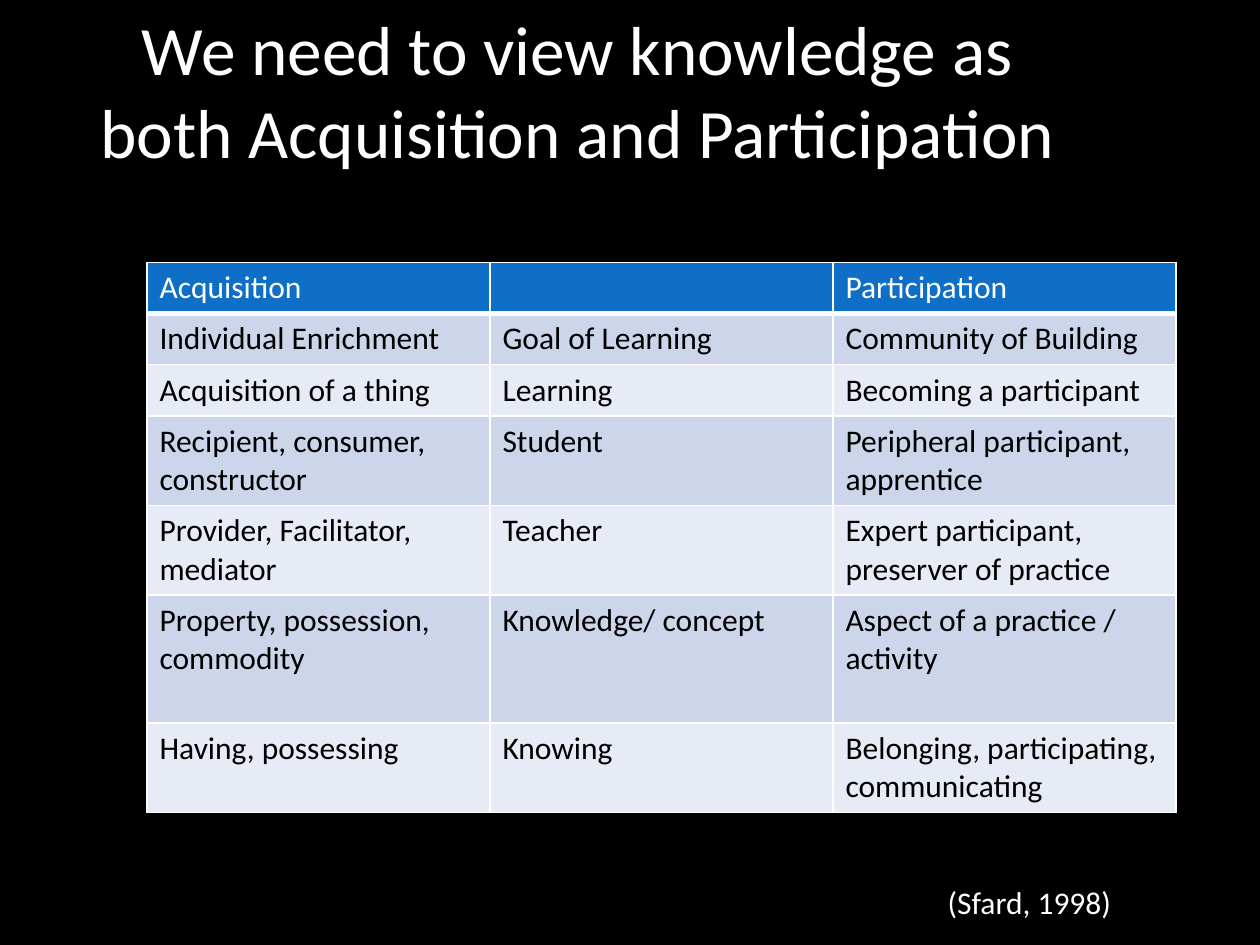
from lxml import etree
from pptx import Presentation
from pptx.dml.color import RGBColor
from pptx.enum.text import MSO_ANCHOR, MSO_AUTO_SIZE, PP_ALIGN
from pptx.oxml.ns import qn
from pptx.util import Inches, Pt

LEFT, MID, RIGHT = PP_ALIGN.LEFT, PP_ALIGN.CENTER, PP_ALIGN.RIGHT
TOP, CENTER = MSO_ANCHOR.TOP, MSO_ANCHOR.MIDDLE
FIXED = MSO_AUTO_SIZE.NONE
TITLE_ONLY = 5
COLS, ROWS = 120, 90

BLACK, WHITE, BLUE = "000000", "FFFFFF", "0F6FC6"
BANDS = ["CCD5EA", "E7EBF5"]
CELLS = [
    ["Acquisition", "", "Participation"],
    ["Individual Enrichment", "Goal of Learning", "Community of Building"],
    ["Acquisition of a thing", "Learning", "Becoming a participant"],
    ["Recipient, consumer, constructor", "Student",
     "Peripheral participant, apprentice"],
    ["Provider, Facilitator, mediator", "Teacher",
     "Expert participant, preserver of practice"],
    ["Property, possession, commodity", "Knowledge/ concept",
     "Aspect of a practice / activity"],
    ["Having, possessing", "Knowing",
     "Belonging, participating, communicating"],
]
LINES = [1, 1, 1, 2, 2, 3, 2]


def color(code):
    return RGBColor.from_string(code)


def write(frame, text, size=18, fill=WHITE, align=LEFT, font="Calibri"):
    frame.word_wrap = True
    para = frame.paragraphs[0]
    para.alignment = align
    para.font.size = Pt(size)
    if text:
        run = para.add_run()
        run.text = text
        run.font.size = Pt(size)
        run.font.name = font
        run.font.color.rgb = color(fill)


def edge(cell, side, width):
    line = etree.SubElement(cell._tc.get_or_add_tcPr(), qn(f"a:ln{side}"),
                            w=str(Pt(width)))
    solid = etree.SubElement(line, qn("a:solidFill"))
    etree.SubElement(solid, qn("a:srgbClr"), val=WHITE)


class Deck:
    def __init__(self, width, height):
        self.show = Presentation()
        self.show.slide_width = Inches(width)
        self.show.slide_height = Inches(height)
        self.col = self.show.slide_width / COLS
        self.row = self.show.slide_height / ROWS

    def page(self, back):
        layout = self.show.slide_layouts[TITLE_ONLY]
        self.slide = self.show.slides.add_slide(layout)
        fill = self.slide.background.fill
        fill.solid()
        fill.fore_color.rgb = color(back)

    def box(self, x, y, w, h):
        return (round(x * self.col), round(y * self.row),
                round(w * self.col), round(h * self.row))

    def title(self, text, *area, **style):
        shape = self.slide.shapes.title
        shape.left, shape.top, shape.width, shape.height = self.box(*area)
        frame = shape.text_frame
        frame.auto_size = FIXED
        frame.vertical_anchor = CENTER
        write(frame, text, **style)

    def note(self, text, *area, **style):
        shape = self.slide.shapes.add_textbox(*self.box(*area))
        write(shape.text_frame, text, **style)

    def table(self, cells, lines, x, y, w):
        tall = [Inches(0.1 + 0.305 * n) for n in lines]
        left, top, wide, _ = self.box(x, y, w, 0)
        grid = self.slide.shapes.add_table(
            len(cells), len(cells[0]), left, top, wide, sum(tall)).table
        for r, texts in enumerate(cells):
            grid.rows[r].height = tall[r]
            for c, text in enumerate(texts):
                self.cell(grid.cell(r, c), text, r)

    def cell(self, cell, text, r):
        head = r == 0
        for side in "LRTB":
            edge(cell, side, 3 if head and side == "B" else 1)
        cell.fill.solid()
        cell.fill.fore_color.rgb = color(BLUE if head else BANDS[(r - 1) % 2])
        cell.vertical_anchor = TOP
        write(cell.text_frame, text, fill=WHITE if head else BLACK)


def main():
    deck = Deck(10, 7.5)
    deck.page(BLACK)
    deck.title("We need to view knowledge as both Acquisition and Participation",
               6, 1, 98, 15, size=39.6, align=MID)
    deck.table(CELLS, LINES, 14, 25, 98)
    deck.note("(Sfard, 1998)", 75, 83.5, 32, 4.8, align=RIGHT)
    deck.show.save("out.pptx")


if __name__ == "__main__":
    main()
